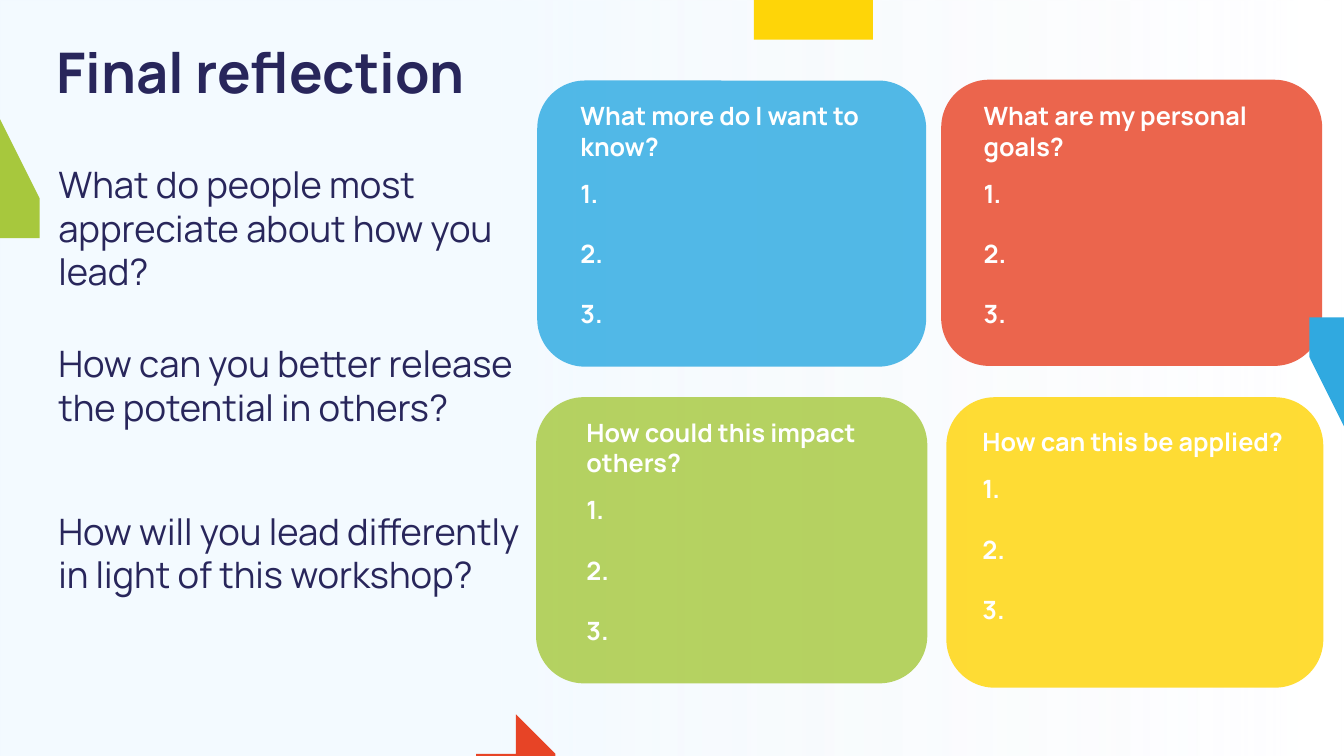
from lxml import etree
from pptx import Presentation
from pptx.dml.color import RGBColor
from pptx.enum.shapes import MSO_SHAPE
from pptx.oxml.ns import qn
from pptx.util import Cm, Pt

RECTANGLE = MSO_SHAPE.RECTANGLE
ROUNDED = MSO_SHAPE.ROUNDED_RECTANGLE

THEME = {
    "font": "Manrope",
    "ink": "28265B", "white": "FFFFFF",
    "fade": "F6F8FC", "tint": "F3FAFF",
    "title": 40, "question": 26, "panel": 18,
    "list gap": 12, "item gap": 21.6, "indent": 0.95,
    "panel opacity": 82,
}

# Content: lengths in cm
SLIDE = (33.87, 19.05)
TITLE = ("Final reflection", (1.17, 0.81, 13.23, 1.96))
QUESTION_LEFT, QUESTION_WIDTH, QUESTION_HEIGHT = 1.22, 12.34, 3.58
QUESTIONS = [  # text, top
    ("What do people most appreciate about how you lead?", 3.96),
    ("How can you better release the potential in others?", 8.48),
    ("How will you lead differently in light of this workshop?", 12.7),
]
ITEMS_PER_PANEL = 3
PANELS = [  # heading, colour, panel box, text box
    ("What more do I want to know?", "2DAAE2",
     (13.54, 2.03, 9.8, 7.21), (14.38, 2.41, 8.89, 6.07)),
    ("What are my personal goals?", "E84427",
     (23.72, 2.01, 9.6, 7.21), (24.54, 2.41, 8.81, 6.07)),
    ("How could this impact others?", "A7C93F",
     (13.51, 10.01, 9.86, 7.21), (14.53, 10.39, 8.03, 6.07)),
    ("How can this be applied?", "FFD508",
     (23.85, 10.01, 9.5, 7.32), (24.51, 10.62, 8.74, 5.31)),
]
# Edge pieces: a pair is a straight step, six numbers are a cubic curve
EDGE_PIECES = [
    ("A7C83D", [
        (0.03, 3.18), (1.22, 4.6), (1.22, 4.67),
        (1.02, 4.88, 0.91, 5.13, 0.86, 5.38),
        (0.86, 5.64), (0.81, 5.69), (-0.97, 6.02), (-1.02, 5.97),
        (-1.07, 5.51, -1.04, 5.05, -0.89, 4.62),
        (-0.79, 4.22, -0.58, 3.86, -0.33, 3.56), (-0.08, 3.28)]),
    ("E74426", [
        (13.82, 19.99), (13.41, 20.45, 12.95, 20.73, 12.45, 20.9),
        (12.4, 20.88), (11.89, 19.13), (11.91, 19.05),
        (12.27, 18.92, 12.52, 18.64, 12.62, 18.29),
        (12.7, 18.26), (14.48, 18.64), (14.5, 18.69),
        (14.43, 19.02, 14.27, 19.35, 14.07, 19.66)]),
    ("FED508", [
        (20.12, 0.97), (19.63, 0.81, 19.2, 0.56, 18.85, 0.2),
        (18.8, 0.13), (18.85, 0.08), (20.17, -1.12), (20.24, -1.12),
        (20.42, -0.94, 20.65, -0.84, 20.9, -0.79),
        (21.31, -0.79), (21.36, -0.76), (21.54, -0.05),
        (21.79, 1.04), (21.74, 1.07),
        (21.51, 1.12, 21.29, 1.14, 21.03, 1.14),
        (20.85, 1.14, 20.65, 1.12, 20.47, 1.07)]),
    ("30A9E0", [
        (33.86, 10.85), (34.04, 10.72),
        (34.26, 10.54, 34.49, 10.31, 34.67, 10.08),
        (34.93, 9.73, 35.1, 9.35, 35.2, 8.97),
        (35.31, 8.31), (35.26, 8.26), (33.43, 8.28), (33.38, 8.31),
        (33.35, 8.69, 33.15, 9.02, 32.84, 9.25),
        (32.84, 9.3), (33.53, 10.52), (33.76, 10.92)]),
]
CURVE_STEPS = 8


def set_alpha(colour, percent):
    alpha = etree.SubElement(colour, qn("a:alpha"))
    alpha.set("val", str(percent * 1000))


def paint(shape, colour):
    shape.shadow.inherit = False
    shape.line.fill.background()
    shape.fill.solid()
    shape.fill.fore_color.rgb = RGBColor.from_string(colour)


def style(paragraph, size, colour, bold=False):
    font = paragraph.font
    font.name, font.size, font.bold = THEME["font"], Pt(size), bold
    font.color.rgb = RGBColor.from_string(colour)


def add_text(slide, text, box, size, colour, bold=False):
    frame = slide.shapes.add_textbox(*map(Cm, box)).text_frame
    frame.word_wrap = True
    frame.paragraphs[0].text = text
    style(frame.paragraphs[0], size, colour, bold)
    return frame


def add_numbered_item(frame, gap):
    item = frame.add_paragraph()
    item.text = " "  # an open line to write on
    item.space_before = Pt(gap)
    properties = item._p.get_or_add_pPr()
    indent = Cm(THEME["indent"])
    properties.set("marL", str(indent))
    properties.set("indent", str(-indent))
    number = etree.SubElement(properties, qn("a:buAutoNum"))
    number.set("type", "arabicPeriod")
    style(item, THEME["panel"], THEME["white"], True)


def trace(outline):
    points = [outline[0]]
    for step in outline[1:]:
        if len(step) == 2:
            points.append(step)
            continue
        corners = (points[-1], step[:2], step[2:4], step[4:])
        for i in range(1, CURVE_STEPS + 1):
            t = i / CURVE_STEPS
            weights = ((1 - t) ** 3, 3 * t * (1 - t) ** 2, 3 * t * t * (1 - t), t ** 3)
            points.append(tuple(sum(w * c[axis] for w, c in zip(weights, corners))
                                for axis in (0, 1)))
    return points


def add_background(slide):
    backdrop = slide.shapes.add_shape(RECTANGLE, 0, 0, *map(Cm, SLIDE))
    paint(backdrop, THEME["tint"])
    backdrop.fill.gradient()
    backdrop.fill.gradient_angle = 180
    fade, tint = backdrop.fill.gradient_stops
    fade.position, tint.position = 0, 0.66
    fade.color.rgb = RGBColor.from_string(THEME["fade"])
    tint.color.rgb = RGBColor.from_string(THEME["tint"])
    set_alpha(next(backdrop._element.spPr.iter(qn("a:srgbClr"))), 0)


def add_panel(slide, heading, colour, panel_box, text_box):
    panel = slide.shapes.add_shape(ROUNDED, *map(Cm, panel_box))
    paint(panel, colour)
    set_alpha(next(panel._element.spPr.iter(qn("a:srgbClr"))), THEME["panel opacity"])
    frame = add_text(slide, heading, text_box, THEME["panel"], THEME["white"], True)
    for i in range(ITEMS_PER_PANEL):
        add_numbered_item(frame, THEME["item gap"] if i else THEME["list gap"])


def add_edge_piece(slide, colour, outline):
    start, *rest = trace(outline)
    builder = slide.shapes.build_freeform(*start, scale=Cm(1))
    builder.add_line_segments(rest, close=True)
    paint(builder.convert_to_shape(), colour)


def main():
    deck = Presentation()
    deck.slide_width, deck.slide_height = map(Cm, SLIDE)
    slide = deck.slides.add_slide(deck.slide_layouts[6])
    add_background(slide)

    # Title and questions on the left
    add_text(slide, *TITLE, THEME["title"], THEME["ink"], True)
    for question, top in QUESTIONS:
        box = (QUESTION_LEFT, top, QUESTION_WIDTH, QUESTION_HEIGHT)
        add_text(slide, question, box, THEME["question"], THEME["ink"])

    # Reflection panels, then the coloured pieces at the slide edges
    for panel in PANELS:
        add_panel(slide, *panel)
    for piece in EDGE_PIECES:
        add_edge_piece(slide, *piece)
    deck.save("out.pptx")


if __name__ == "__main__":
    main()
